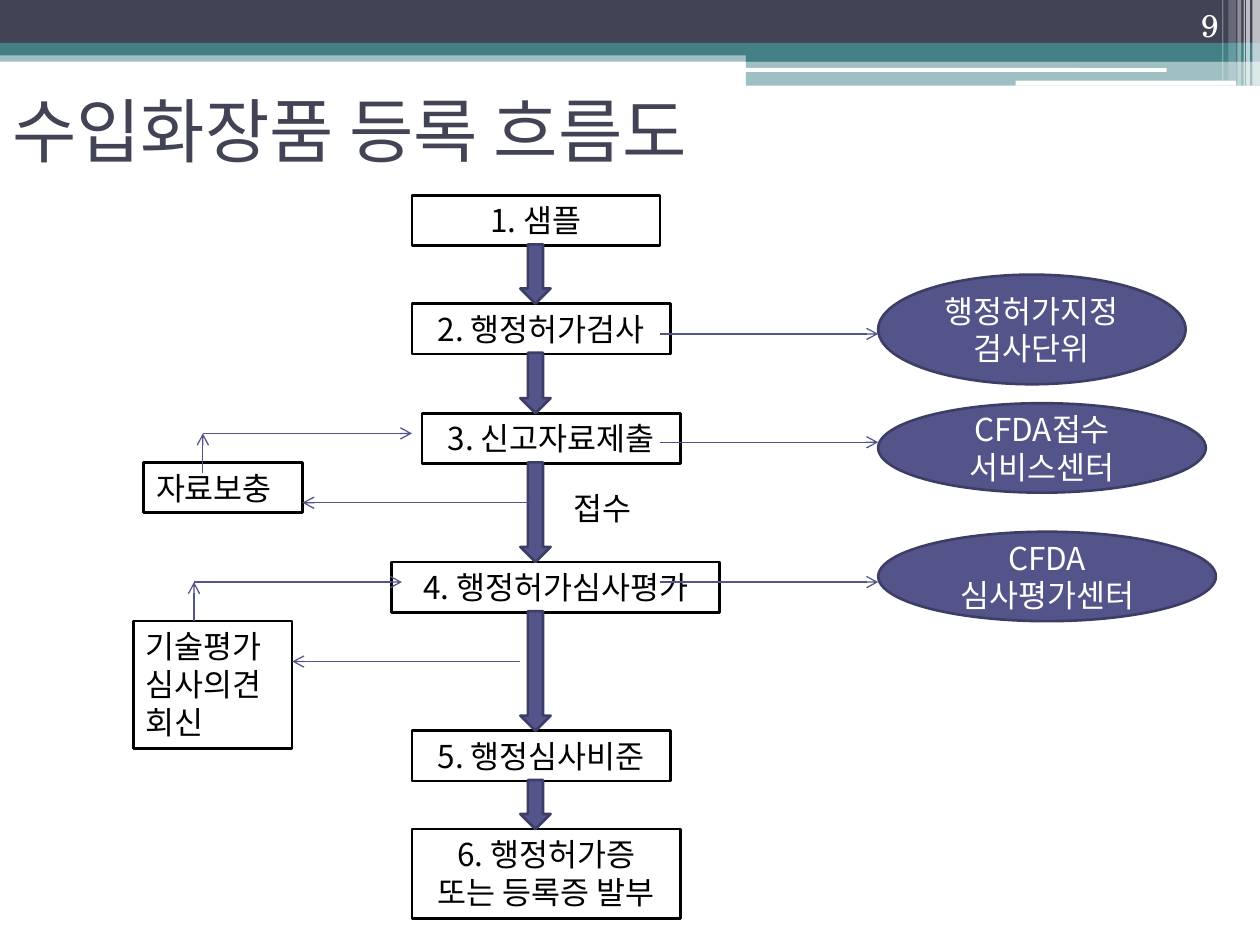
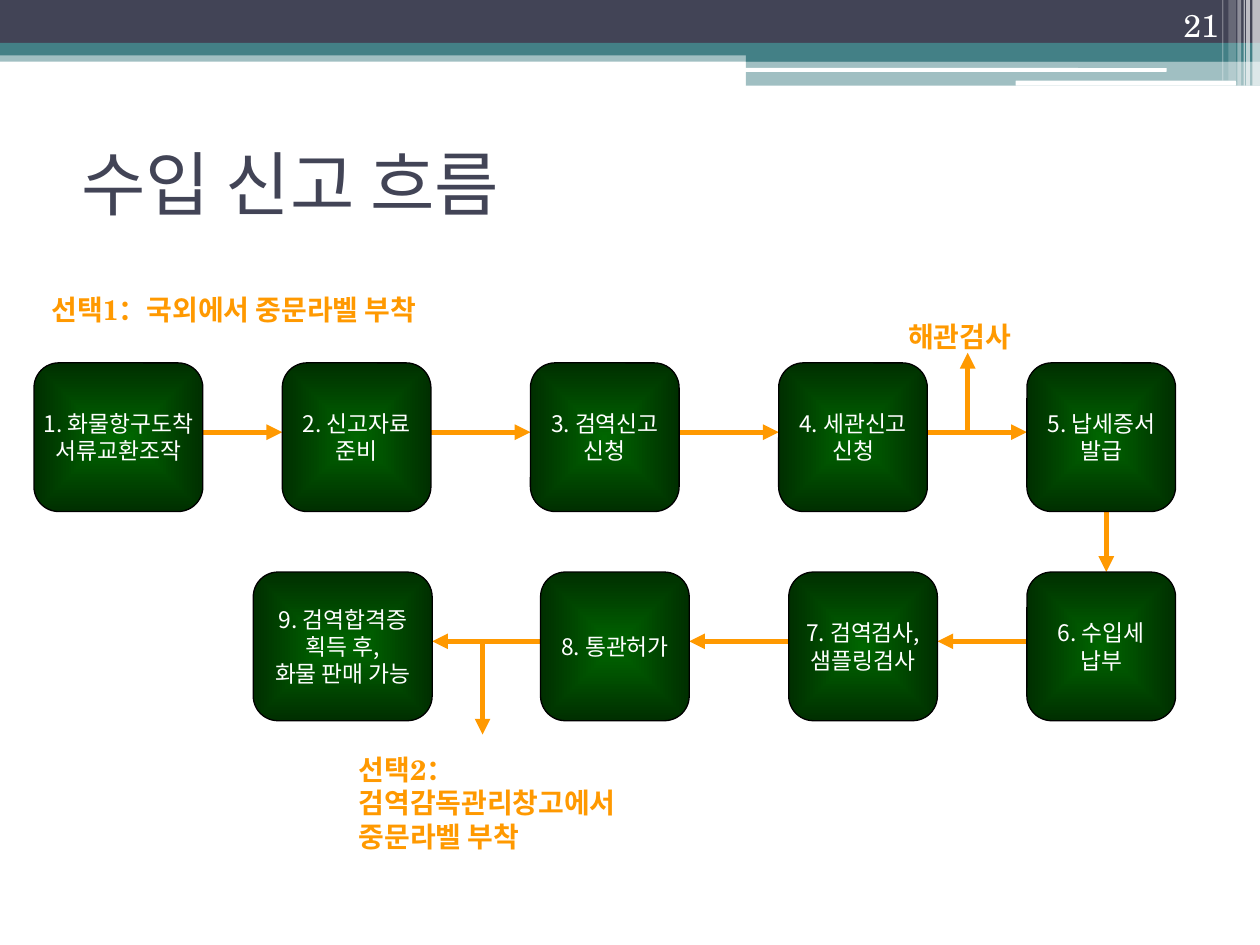
from typing import NamedTuple

from lxml.etree import SubElement
from pptx import Presentation
from pptx.dml.color import RGBColor
from pptx.enum.shapes import MSO_CONNECTOR, MSO_SHAPE
from pptx.enum.text import MSO_ANCHOR, PP_ALIGN
from pptx.oxml import parse_xml
from pptx.oxml.ns import nsdecls, qn
from pptx.util import Inches, Pt

SANS, SERIF = "Noto Sans CJK KR", "TeX Gyre Schola"
SLATE, TEAL, WHITE, BLACK = "424456", "438086", "FFFFFF", "000000"
INDIGO, NAVY, ORANGE = "53548A", "3D3E66", "FF9900"
GREEN, DARK_GREEN = "006600", "002F00"
LEFT, CENTER, RIGHT = PP_ALIGN.LEFT, PP_ALIGN.CENTER, PP_ALIGN.RIGHT
TOP, MIDDLE, BOTTOM = MSO_ANCHOR.TOP, MSO_ANCHOR.MIDDLE, MSO_ANCHOR.BOTTOM
RECT, ROUND = MSO_SHAPE.RECTANGLE, MSO_SHAPE.ROUNDED_RECTANGLE


class Box(NamedTuple):
    """Place of an element in inches, with its text."""
    x: float
    y: float
    w: float
    h: float
    text: str = ""


class Band(NamedTuple):
    """Plain decoration of the header."""
    box: Box
    color: str
    alpha: int = 100
    kind: MSO_SHAPE = RECT


class Style(NamedTuple):
    """Look of a piece of text."""
    size: float
    color: str
    font: str = SANS
    bold: bool = False
    align: PP_ALIGN = LEFT
    anchor: MSO_ANCHOR = TOP
    wrap: bool = True


class Link(NamedTuple):
    """Straight arrow from one point to another."""
    x1: float
    y1: float
    x2: float
    y2: float


BANDS = [
    Band(Box(0, 0.4, 10, 0.09), TEAL, 50),
    Band(Box(0, 0, 10, 0.34), SLATE),
    Band(Box(0, 0.34, 10, 0.1), TEAL),
    Band(Box(5.92, 0.39, 4.08, 0.1), TEAL),
    Band(Box(5.92, 0.48, 4.08, 0.2), TEAL, 50),
    Band(Box(5.91, 0.54, 3.35, 0.03), WHITE, 100, ROUND),
    Band(Box(8.06, 0.64, 1.75, 0.04), WHITE, 100, ROUND),
    Band(Box(9.94, 0, 0.06, 0.68), WHITE, 65),
    Band(Box(9.89, 0, 0.03, 0.68), WHITE, 65),
    Band(Box(9.87, 0, 0.01, 0.68), WHITE, 60),
    Band(Box(9.82, 0, 0.03, 0.68), WHITE, 40),
    Band(Box(9.75, 0, 0.06, 0.64), WHITE, 20),
    Band(Box(9.7, 0, 0.01, 0.64), WHITE, 30),
]
TITLE = Style(40, SLATE, anchor=MIDDLE)
NUMBER = Style(18, WHITE, SERIF, align=RIGHT, anchor=BOTTOM)
STEP = Style(18, BLACK, align=CENTER)
NOTE = Style(18, BLACK)
AGENCY = Style(18, WHITE, align=CENTER, anchor=MIDDLE)
TILE = Style(13, WHITE, align=CENTER, anchor=MIDDLE, wrap=False)
LABEL = Style(16, ORANGE, SERIF, bold=True)


def rgb(color: str) -> RGBColor:
    """Turn a hex string into a colour."""
    return RGBColor.from_string(color)


def write(shape, text: str, style: Style) -> None:
    """Fill a shape with text, one line break per newline."""
    tf = shape.text_frame
    tf.word_wrap = style.wrap
    tf.vertical_anchor = style.anchor
    p = tf.paragraphs[0]
    p.alignment = style.align
    for i, line in enumerate(text.split("\n")):
        if i:
            p.add_line_break()
        r = p.add_run()
        r.text = line
        r.font.size = Pt(style.size)
        r.font.bold = style.bold
        r.font.color.rgb = rgb(style.color)
        r.font.name = style.font
        SubElement(r.font._element, qn("a:ea")).set("typeface", SANS)


def add_text(s, box: Box, style: Style) -> None:
    """Add a text box."""
    tb = s.shapes.add_textbox(*map(Inches, box[:4]))
    write(tb, box.text, style)


def add_box(s, kind: MSO_SHAPE, box: Box, fill: str, line: str = "",
            width: float = 1.5, style: Style = STEP):
    """Add a filled shape with an optional outline and text."""
    sp = s.shapes.add_shape(kind, *map(Inches, box[:4]))
    sp.shadow.inherit = False
    sp.fill.solid()
    sp.fill.fore_color.rgb = rgb(fill)
    if line:
        sp.line.color.rgb = rgb(line)
        sp.line.width = Pt(width)
    else:
        sp.line.fill.background()
    if box.text:
        write(sp, box.text, style)
    return sp


def add_band(s, band: Band) -> None:
    """Add one header band, transparent where asked."""
    sp = add_box(s, band.kind, band.box, band.color)
    if band.alpha < 100:
        clr = sp.element.spPr.find(qn("a:solidFill")).find(qn("a:srgbClr"))
        SubElement(clr, qn("a:alpha")).set("val", str(band.alpha * 1000))


def add_tile(s, box: Box) -> None:
    """Add a rounded tile that darkens towards its edges."""
    sp = add_box(s, ROUND, box, GREEN, BLACK, 0.75, TILE)
    grad = parse_xml(
        f'<a:gradFill {nsdecls("a")} rotWithShape="1"><a:gsLst>'
        f'<a:gs pos="0"><a:srgbClr val="{GREEN}"/></a:gs>'
        f'<a:gs pos="100000"><a:srgbClr val="{DARK_GREEN}"/></a:gs></a:gsLst>'
        '<a:path path="shape"><a:fillToRect l="50000" t="50000" r="50000"'
        ' b="50000"/></a:path></a:gradFill>')
    spPr = sp.element.spPr
    spPr.replace(spPr.find(qn("a:solidFill")), grad)


def add_link(s, link: Link, color: str, width: float, head: str) -> None:
    """Add a connector with an arrowhead at its end."""
    c = s.shapes.add_connector(MSO_CONNECTOR.STRAIGHT, *map(Inches, link))
    c.line.color.rgb = rgb(color)
    c.line.width = Pt(width)
    SubElement(c.line._get_or_add_ln(), qn("a:tailEnd")).set("type", head)
    SubElement(c._element.spPr, qn("a:effectLst"))


def add_base(prs, title: Box, number: str):
    """Add a slide with the shared header, title and page number."""
    s = prs.slides.add_slide(prs.slide_layouts[6])
    for band in BANDS:
        add_band(s, band)
    add_text(s, title, TITLE)
    add_text(s, Box(8.94, 0, 0.83, 0.4, number), NUMBER)
    return s


def registration_slide(prs) -> None:
    """Build the registration flow."""
    s = add_base(prs, Box(0, 0.44, 9, 1.17, "수입화장품 등록 흐름도"), "9")
    steps = [
        Box(3.27, 1.55, 1.97, 0.4, "1. 샘플"),
        Box(3.27, 2.41, 2.05, 0.4, "2. 행정허가검사"),
        Box(3.35, 3.28, 2.05, 0.4, "3. 신고자료제출"),
        Box(3.11, 4.46, 2.6, 0.4, "4. 행정허가심사평가"),
        Box(3.27, 5.8, 2.05, 0.4, "5. 행정심사비준"),
        Box(3.27, 6.58, 2.13, 0.71, "6. 행정허가증\n또는 등록증 발부"),
    ]
    notes = [
        Box(1.14, 3.67, 1.26, 0.4, "자료보충"),
        Box(1.06, 4.93, 1.26, 1.01, "기술평가\n심사의견\n회신"),
    ]
    agencies = [
        Box(6.97, 2.18, 2.44, 0.87, "행정허가지정\n검사단위"),
        Box(6.97, 3.2, 2.6, 0.71, "CFDA접수\n서비스센터"),
        Box(6.97, 4.22, 2.68, 0.71, "CFDA\n심사평가센터"),
    ]
    for box in steps:
        add_box(s, RECT, box, WHITE, BLACK)
    for box in notes:
        add_box(s, RECT, box, WHITE, BLACK, style=NOTE)
    for box in agencies:
        add_box(s, MSO_SHAPE.OVAL, box, INDIGO, NAVY, style=AGENCY)
    for upper, lower in zip(steps, steps[1:]):
        y = upper.y + upper.h - 0.01
        arrow = Box(4.13, y, 0.24, lower.y - y)
        add_box(s, MSO_SHAPE.DOWN_ARROW, arrow, INDIGO, NAVY)
    add_text(s, Box(4.45, 3.83, 1.73, 0.4, "접수"), NOTE)
    links = [Link(5.24, y, 6.97, y) for y in (2.65, 3.51, 4.62)] + [
        Link(4.21, 3.99, 2.4, 3.99),
        Link(1.61, 3.75, 1.61, 3.44),
        Link(1.61, 3.44, 3.27, 3.44),
        Link(4.13, 5.25, 2.32, 5.25),
        Link(1.54, 4.93, 1.54, 4.62),
        Link(1.54, 4.62, 3.19, 4.62),
    ]
    for link in links:
        add_link(s, link, INDIGO, 0.75, "arrow")


def declaration_slide(prs) -> None:
    """Build the import declaration flow."""
    s = add_base(prs, Box(0.55, 0.86, 9, 1.17, "수입 신고 흐름"), "21")
    size, top, bottom, pitch = 1.18, 2.88, 4.54, 1.97
    texts = ["1. 화물항구도착\n서류교환조작", "2. 신고자료\n준비",
             "3. 검역신고\n신청", "4. 세관신고\n신청", "5. 납세증서\n발급"]
    upper = [Box(0.27 + i * pitch, top, size if i else 1.34, size, text)
             for i, text in enumerate(texts)]
    lower = [
        Box(8.15, bottom, size, size, "6. 수입세\n납부"),
        Box(6.26, bottom, size, size, "7. 검역검사,\n샘플링검사"),
        Box(4.29, bottom, size, size, "8. 통관허가"),
        Box(2.01, bottom, 1.42, size, "9. 검역합격증\n획득 후,\n화물 판매 가능"),
    ]
    links = [Link(a.x + a.w, 3.43, b.x, 3.43) for a, b in zip(upper, upper[1:])]
    links += [Link(a.x, 5.09, b.x + b.w, 5.09) for a, b in zip(lower, lower[1:])]
    links += [
        Link(7.68, 3.43, 7.68, 2.8),
        Link(8.78, top + size, 8.78, bottom),
        Link(3.83, 5.08, 3.83, 5.83),
    ]
    for link in links:
        add_link(s, link, ORANGE, 3, "triangle")
    for box in upper + lower:
        add_tile(s, box)
    labels = [
        Box(7.11, 2.49, 1.33, 0.37, "해관검사"),
        Box(2.75, 5.92, 2.72, 0.91, "선택2：\n검역감독관리창고에서\n중문라벨 부착"),
        Box(0.31, 2.27, 3.33, 0.37, "선택1：국외에서 중문라벨 부착"),
    ]
    for box in labels:
        add_text(s, box, LABEL)


def main() -> None:
    """Build and save the slides."""
    prs = Presentation()
    prs.slide_width, prs.slide_height = Inches(10), Inches(7.5)
    registration_slide(prs)
    declaration_slide(prs)
    prs.save("out.pptx")


if __name__ == "__main__":
    main()
